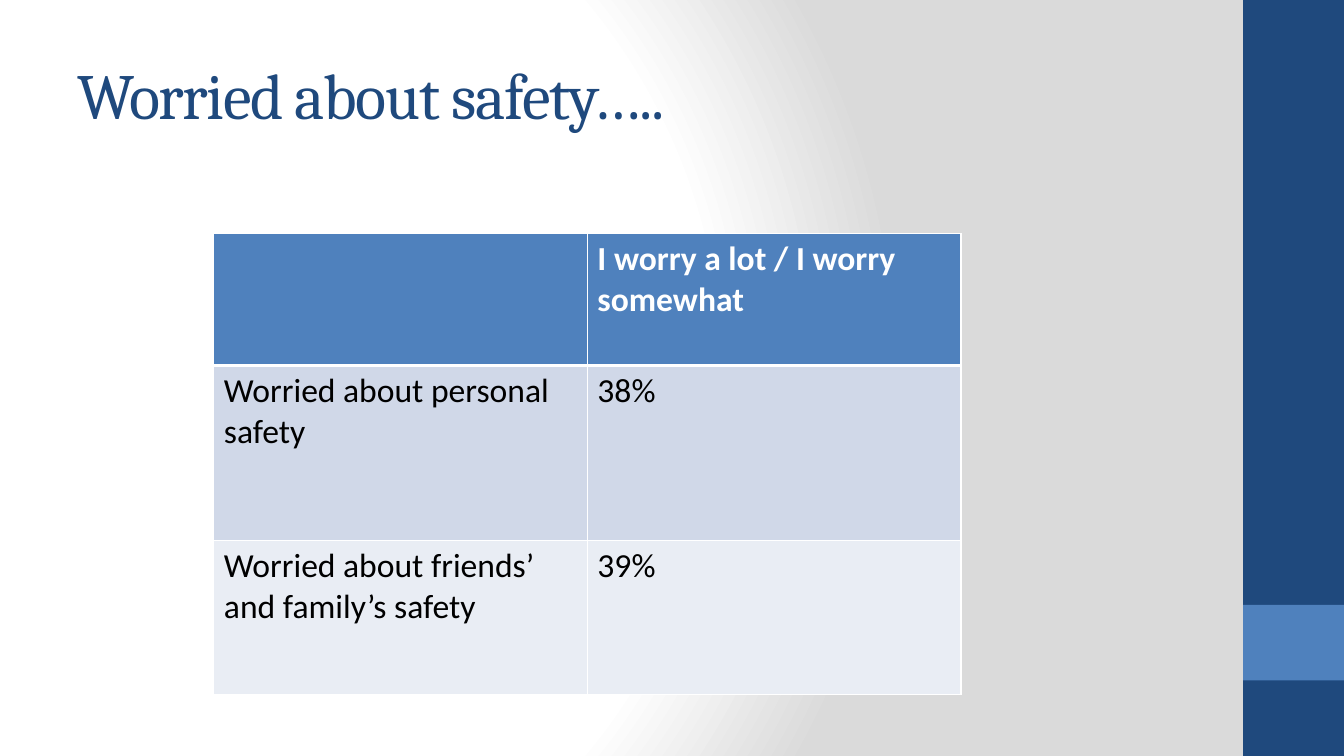
from lxml import etree
from pptx import Presentation
from pptx import util as u
from pptx.dml import color
from pptx.enum import shapes, text
from pptx.oxml import ns, parse_xml

Pt = u.Pt
NAVY, BLUE, WHITE, BLACK = "1F497D", "4F81BD", "FFFFFF", "000000"
ROWS = [
    ("", "I worry a lot / I worry somewhat"),
    ("Worried about personal safety", "38%"),
    ("Worried about friends’ and family’s safety", "39%"),
]
ROW_HEIGHTS = [94.5, 125, 110]
ROW_FILLS = [BLUE, "D0D8E8", "E9EDF4"]
COLUMN_WIDTH = 266.8


def rgb(value):
    return color.RGBColor.from_string(value)


def write(frame, content, size, font, ink, bold=False, spacing=None):
    frame.word_wrap = True
    para = frame.paragraphs[0]
    span = para.add_run()
    span.text = content
    span.font.size = Pt(size)
    span.font.name = font
    span.font.bold = bold
    span.font.color.rgb = rgb(ink)
    if spacing is not None:
        span.font._element.set("spc", str(spacing * 100))


def add_background(page):
    page.background.fill.gradient()
    gradient = page.element.xpath(".//p:bg//a:gradFill")[0]
    stops = "".join(
        f'<a:gs pos="{place * 1000}"><a:srgbClr val="{value}"/></a:gs>'
        for place, value in [(0, WHITE), (75, WHITE), (100, "DADADA")]
    )
    radial = parse_xml(
        f'<a:gradFill {ns.nsdecls("a")} rotWithShape="1"><a:gsLst>{stops}</a:gsLst>'
        '<a:path path="circle"><a:fillToRect l="20000" t="50000" r="100000" b="50000"/>'
        "</a:path></a:gradFill>"
    )
    gradient.getparent().replace(gradient, radial)


def add_band(page, top, height, fill):
    band = page.shapes.add_shape(
        shapes.MSO_SHAPE.RECTANGLE, Pt(888), Pt(top), Pt(72), Pt(height)
    )
    band.shadow.inherit = False
    band.fill.solid()
    band.fill.fore_color.rgb = rgb(fill)
    band.line.fill.background()


def add_title(page, content):
    box = page.shapes.add_textbox(Pt(48), Pt(21.6), Pt(800), Pt(90))
    box.text_frame.vertical_anchor = text.MSO_ANCHOR.MIDDLE
    write(box.text_frame, content, 46, "Cambria", NAVY, spacing=-1)


def add_borders(cell, widths):
    properties = cell._tc.get_or_add_tcPr()
    for position, (side, width) in enumerate(widths.items()):
        line = etree.Element(ns.qn(f"a:ln{side}"), w=str(Pt(width)))
        fill = etree.SubElement(line, ns.qn("a:solidFill"))
        etree.SubElement(fill, ns.qn("a:srgbClr"), val=WHITE)
        properties.insert(position, line)


def add_worry_table(page):
    frame = page.shapes.add_table(
        len(ROWS), 2, Pt(152.8), Pt(166.5), Pt(2 * COLUMN_WIDTH), Pt(sum(ROW_HEIGHTS))
    )
    table = frame.table
    for column in table.columns:
        column.width = Pt(COLUMN_WIDTH)
    for index, (labels, height, fill) in enumerate(zip(ROWS, ROW_HEIGHTS, ROW_FILLS)):
        table.rows[index].height = Pt(height)
        header = index == 0
        for column, label in enumerate(labels):
            cell = table.cell(index, column)
            cell.fill.solid()
            cell.fill.fore_color.rgb = rgb(fill)
            top, bottom = (3 if index == 1 else 1), (3 if header else 1)
            add_borders(cell, {"L": 1, "R": 1, "T": top, "B": bottom})
            if label:
                write(cell.text_frame, label, 24, "Calibri", WHITE if header else BLACK, header)


def main():
    deck = Presentation()
    deck.slide_width, deck.slide_height = Pt(960), Pt(540)
    page = deck.slides.add_slide(deck.slide_layouts[6])
    add_background(page)
    add_band(page, 0, 540, NAVY)
    add_band(page, 432, 54, BLUE)
    add_title(page, "Worried about safety…..")
    add_worry_table(page)
    deck.save("out.pptx")


if __name__ == "__main__":
    main()
